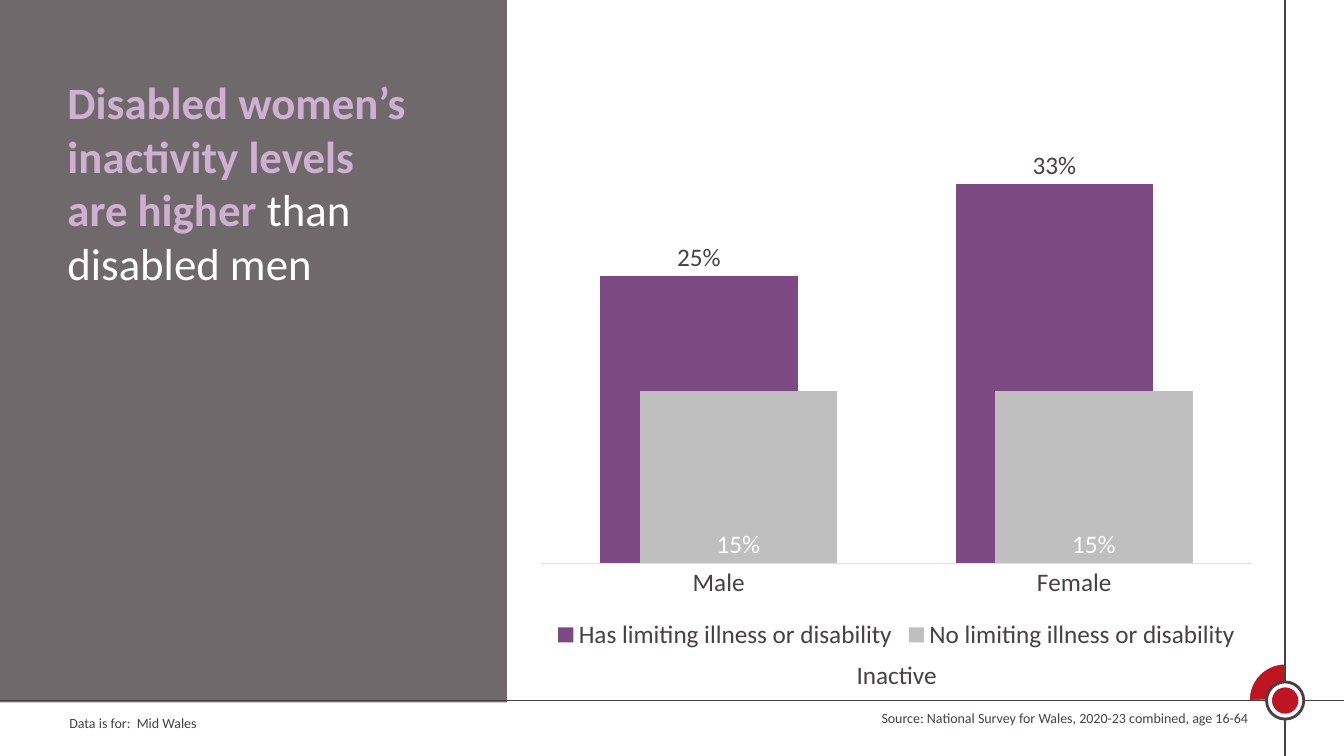
from pptx import Presentation
from pptx.chart.data import CategoryChartData
from pptx.dml.color import RGBColor
from pptx.enum.chart import XL_CHART_TYPE as ChartType
from pptx.enum.chart import XL_LABEL_POSITION as LabelPosition
from pptx.enum.chart import XL_LEGEND_POSITION as LegendPosition
from pptx.enum.chart import XL_TICK_MARK as TickMark
from pptx.enum.shapes import MSO_CONNECTOR as Connector
from pptx.enum.shapes import MSO_SHAPE as Shape
from pptx.enum.text import MSO_ANCHOR as Anchor
from pptx.enum.text import MSO_AUTO_SIZE as AutoSize
from pptx.enum.text import PP_ALIGN as Align
from pptx.oxml import parse_xml
from pptx.oxml.ns import nsdecls, qn
from pptx.util import Pt
from lxml.etree import SubElement

COLORS = {
    "ink": "484043",
    "red": "BD1622",
    "white": "FFFFFF",
    "lilac": "CFB0D3",
    "purple": "7C4982",
    "grey": "BFBFBF",
    "axis": "E5E1E3",
}
RGB = {name: RGBColor.from_string(value) for name, value in COLORS.items()}
WIDTH, HEIGHT = 960, 540
TARGET_X, TARGET_Y = 918, 500.4


def style_font(font, size, color, bold=False):
    font.name = "Calibri"
    font.size = Pt(size)
    font.bold = bold
    font.color.rgb = RGB[color]


def add_filled_shape(kind, left, top, width, height, fill, line=None, weight=0):
    shape = slide.shapes.add_shape(kind, Pt(left), Pt(top), Pt(width), Pt(height))
    shape.shadow.inherit = False
    shape.fill.solid()
    shape.fill.fore_color.rgb = RGB[fill]
    if line:
        shape.line.color.rgb = RGB[line]
        shape.line.width = Pt(weight)
    else:
        shape.line.fill.background()
    return shape


presentation = Presentation()
presentation.slide_width, presentation.slide_height = Pt(WIDTH), Pt(HEIGHT)
slide = presentation.slides.add_slide(presentation.slide_layouts[5])

# Target where the two frame lines cross
quarter = add_filled_shape(Shape.PIE, TARGET_X - 26, TARGET_Y - 26.5, 52, 52,
                           "red", "white", 1.5)
quarter.adjustments[0] = 106.62
quarter.adjustments[1] = 162

for x1, y1, x2, y2 in [(TARGET_X, 0, TARGET_X, HEIGHT),
                       (0, TARGET_Y, WIDTH, TARGET_Y)]:
    frame_line = slide.shapes.add_connector(Connector.STRAIGHT,
                                            Pt(x1), Pt(y1), Pt(x2), Pt(y2))
    frame_line.line.color.rgb = RGB["ink"]
    frame_line.line.width = Pt(1)
    SubElement(frame_line.element.spPr, qn("a:effectLst"))

for diameter, fill, line in [(26.6, "white", "ink"), (18.8, "red", None)]:
    add_filled_shape(Shape.OVAL, TARGET_X - diameter / 2, TARGET_Y - diameter / 2,
                     diameter, diameter, fill, line, 2)

# Title panel
panel = add_filled_shape(Shape.RECTANGLE, -0.7, 0, 362.9, 501.8, "ink")
panel_color = panel.fill._xPr.find(qn("a:solidFill"))[0]
SubElement(panel_color, qn("a:alpha"), val="78000")

title = slide.shapes.title
slide.shapes.element.append(title.element)
title.left, title.top, title.width, title.height = Pt(41), Pt(49.7), Pt(268.6), Pt(271.4)
title_frame = title.text_frame
title_frame.word_wrap = True
title_frame.auto_size = AutoSize.NONE
title_frame.vertical_anchor = Anchor.TOP
title_paragraph = title_frame.paragraphs[0]
title_paragraph.alignment = Align.LEFT
for text, color, bold in [("Disabled women’s inactivity levels are higher ", "lilac", True),
                          ("than disabled men", "white", False)]:
    run = title_paragraph.add_run()
    run.text = text
    style_font(run.font, 32, color, bold)

# Notes below the frame line and the chart caption
for text, left, top, width, height, size, alignment in [
    ("Data is for:  Mid Wales", 42.5, 506.9, 316, 19.4, 10, Align.LEFT),
    ("Source: National Survey for Wales, 2020-23 combined, age 16-64",
     599, 503.3, 299.5, 19.4, 10, Align.RIGHT),
    ("Inactive", 604.8, 467.3, 87.8, 29, 18, Align.LEFT),
]:
    box = slide.shapes.add_textbox(Pt(left), Pt(top), Pt(width), Pt(height))
    box.text_frame.word_wrap = True
    paragraph = box.text_frame.paragraphs[0]
    paragraph.alignment = alignment
    run = paragraph.add_run()
    run.text = text
    style_font(run.font, size, "ink")

# Inactivity chart
chart_data = CategoryChartData(number_format="0%")
chart_data.categories = ["Male", "Female"]
chart_data.add_series("Has limiting illness or disability", (0.25, 0.33))
chart_data.add_series("No limiting illness or disability", (0.15, 0.15))
chart = slide.shapes.add_chart(ChartType.COLUMN_CLUSTERED, Pt(375.8), Pt(104.4),
                               Pt(529.2), Pt(363.6), chart_data).chart
style_font(chart.font, 18, "ink")
chart.has_title = False
chart.has_legend = True
chart.legend.position = LegendPosition.BOTTOM
chart.legend.include_in_layout = False
style_font(chart.legend.font, 18, "ink")

category_axis = chart.category_axis
category_axis.major_tick_mark = TickMark.NONE
category_axis.format.line.color.rgb = RGB["axis"]
category_axis.format.line.width = Pt(0.75)
style_font(category_axis.tick_labels.font, 18, "ink")

value_axis = chart.value_axis
value_axis.visible = False
value_axis.has_major_gridlines = False
value_axis.minimum_scale = 0
value_axis.maximum_scale = 0.35

plot = chart.plots[0]
plot.vary_by_categories = False
plot.gap_width = 60
plot.overlap = 80
for series, fill, label_color, position in zip(
        plot.series, ("purple", "grey"), ("ink", "white"),
        (LabelPosition.OUTSIDE_END, LabelPosition.INSIDE_BASE)):
    series.format.fill.solid()
    series.format.fill.fore_color.rgb = RGB[fill]
    labels = series.data_labels
    labels.show_value = True
    labels.number_format = "0%"
    labels.number_format_is_linked = False
    labels.position = position
    style_font(labels.font, 18, label_color)

plot_area = chart.element.find(".//" + qn("c:plotArea"))
for old_layout in plot_area.findall(qn("c:layout")):
    plot_area.remove(old_layout)
plot_area.insert(0, parse_xml(
    f'<c:layout {nsdecls("c")}><c:manualLayout><c:layoutTarget val="inner"/>'
    '<c:xMode val="edge"/><c:yMode val="edge"/><c:x val="0.02"/><c:y val="0.03"/>'
    '<c:w val="0.96"/><c:h val="0.79"/></c:manualLayout></c:layout>'))

presentation.save("out.pptx")
